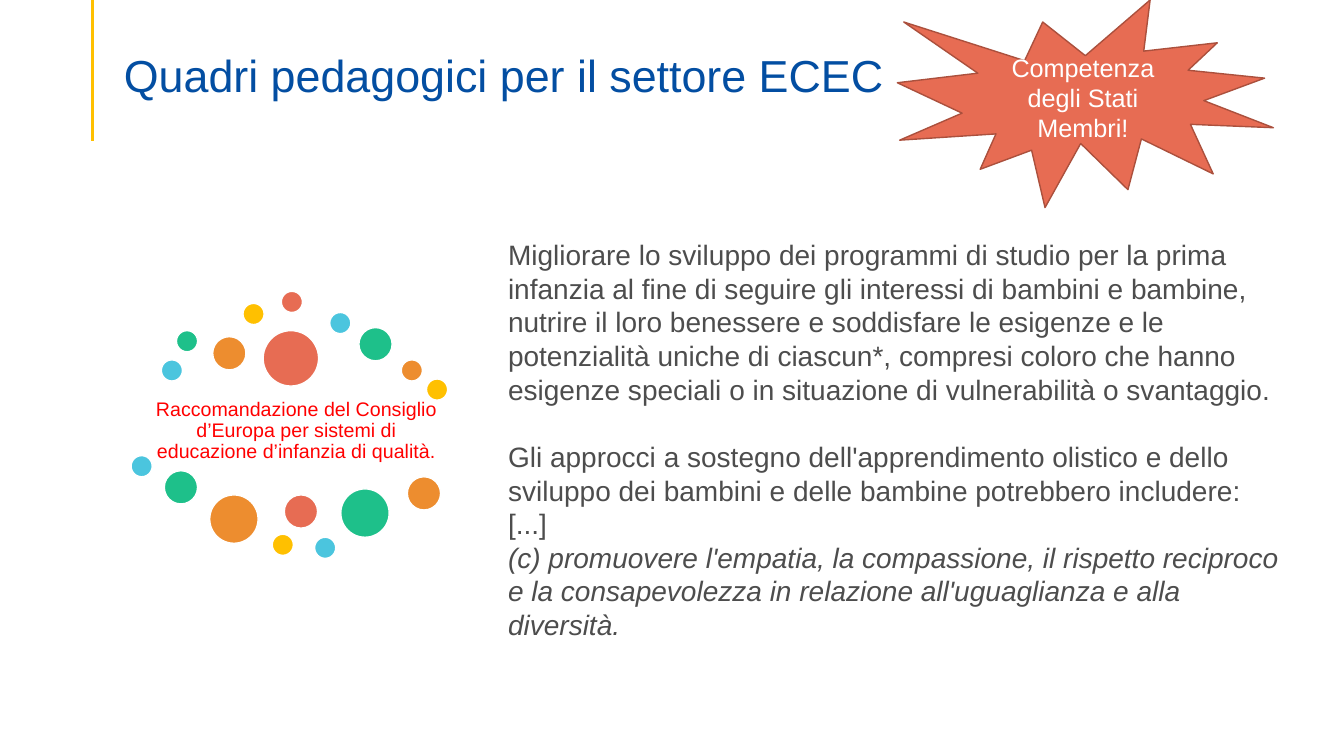
from pptx import Presentation
from pptx.dml.color import RGBColor
from pptx.enum.shapes import MSO_CONNECTOR, MSO_SHAPE
from pptx.enum.text import MSO_ANCHOR, PP_ALIGN
from pptx.oxml.ns import qn
from pptx.util import Inches, Pt
from lxml.etree import SubElement

HUES = {
    "blue": "034EA2", "gray": "4D4D4D", "white": "FFFFFF", "red": "FF0000",
    "coral": "E76C53", "rust": "AB503D", "sky": "4BC5DE", "green": "1EC08A",
    "orange": "ED8D2F", "gold": "FFC000",
}
SMALL, MID, LARGE, HUGE = 0.21, 0.33, 0.48, 0.55
DOTS = [
    (1.6, 3.57, SMALL, "sky"), (1.75, 3.28, SMALL, "green"),
    (2.11, 3.34, MID, "orange"), (2.41, 3.01, SMALL, "gold"),
    (2.79, 2.89, SMALL, "coral"), (3.27, 3.1, SMALL, "sky"),
    (3.56, 3.25, MID, "green"), (3.98, 3.57, SMALL, "orange"),
    (4.23, 3.76, SMALL, "gold"), (2.61, 3.28, HUGE, "coral"),
    (1.3, 4.52, SMALL, "sky"), (1.63, 4.67, MID, "green"),
    (2.08, 4.91, LARGE, "orange"), (2.7, 5.3, SMALL, "gold"),
    (2.82, 4.91, MID, "coral"), (3.12, 5.33, SMALL, "sky"),
    (3.38, 4.85, LARGE, "green"), (4.04, 4.73, MID, "orange"),
]
BODY = [
    ("Migliorare lo sviluppo dei programmi di studio per la prima infanzia al fine "
     "di seguire gli interessi di bambini e bambine, nutrire il loro benessere e "
     "soddisfare le esigenze e le potenzialità uniche di ciascun*, compresi coloro "
     "che hanno esigenze speciali o in situazione di vulnerabilità o svantaggio.",
     0, False),
    ("Gli approcci a sostegno dell'apprendimento olistico e dello sviluppo dei "
     "bambini e delle bambine potrebbero includere: [...]", 24, False),
    ("(c) promuovere l'empatia, la compassione, il rispetto reciproco e la "
     "consapevolezza in relazione all'uguaglianza e alla diversità.", 0, True),
]


def color(name):
    return RGBColor.from_string(HUES[name])


class Deck:
    """Holds the font and the current slide."""
    font = "Arial"

    def __init__(self):
        self.show = Presentation()
        self.show.slide_width = Inches(13.33)
        self.show.slide_height = Inches(7.5)
        self.slide = self.show.slides.add_slide(self.show.slide_layouts[6])

    def fill(self, frame, paras, size, hue, align=PP_ALIGN.LEFT,
             anchor=MSO_ANCHOR.TOP, space=1.0, inset=(0.1, 0.05, 0.1, 0.05)):
        """Fill a frame from (text, points before, italic) items."""
        frame.word_wrap = True
        frame.vertical_anchor = anchor
        (frame.margin_left, frame.margin_top,
         frame.margin_right, frame.margin_bottom) = map(Inches, inset)
        for num, (words, before, italic) in enumerate(paras):
            para = frame.add_paragraph() if num else frame.paragraphs[0]
            para.alignment = align
            para.line_spacing = space
            para.space_before = Pt(before)
            run = para.add_run()
            run.text = words
            run.font.name = self.font
            run.font.size = Pt(size)
            run.font.italic = italic
            run.font.color.rgb = color(hue)

    def text(self, box, paras, size, hue, **style):
        area = self.slide.shapes.add_textbox(*map(Inches, box))
        self.fill(area.text_frame, paras, size, hue, **style)

    def shape(self, kind, box, fill, edge):
        form = self.slide.shapes.add_shape(kind, *map(Inches, box))
        form.shadow.inherit = False
        form.fill.solid()
        form.fill.fore_color.rgb = color(fill)
        form.line.color.rgb = color(edge)
        form.line.width = Pt(1)
        return form

    def line(self, ends, hue, width):
        rule = self.slide.shapes.add_connector(
            MSO_CONNECTOR.STRAIGHT, *map(Inches, ends))
        rule.line.color.rgb = color(hue)
        rule.line.width = Pt(width)
        SubElement(rule._element.spPr, qn("a:effectLst"))


def main():
    deck = Deck()
    deck.line((0.92, 0, 0.92, 1.4), "gold", 2.25)
    deck.text((1.13, 0.15, 11.5, 0.86),
              [("Quadri pedagogici per il settore ECEC", 0, False)], 32, "blue",
              anchor=MSO_ANCHOR.BOTTOM, space=0.9, inset=(0.1, 0.05, 0.1, 0))
    deck.text((4.94, 2.31, 7.92, 4.14), BODY, 20, "gray")
    burst = deck.shape(MSO_SHAPE.EXPLOSION1, (8.9, 0, 3.73, 2.06), "coral", "rust")
    deck.fill(burst.text_frame, [("Competenza degli Stati Membri!", 0, False)],
              18, "white", align=PP_ALIGN.CENTER, anchor=MSO_ANCHOR.MIDDLE)
    deck.text((1.51, 3.88, 2.86, 0.8),
              [("Raccomandazione del Consiglio d’Europa per sistemi di educazione "
                "d’infanzia di qualità.", 0, False)], 14, "red",
              align=PP_ALIGN.CENTER, anchor=MSO_ANCHOR.MIDDLE, space=0.9,
              inset=(0.02,) * 4)
    for left, top, size, hue in DOTS:
        deck.shape(MSO_SHAPE.OVAL, (left, top, size, size), hue, "white")
    deck.show.save("out.pptx")


if __name__ == "__main__":
    main()
